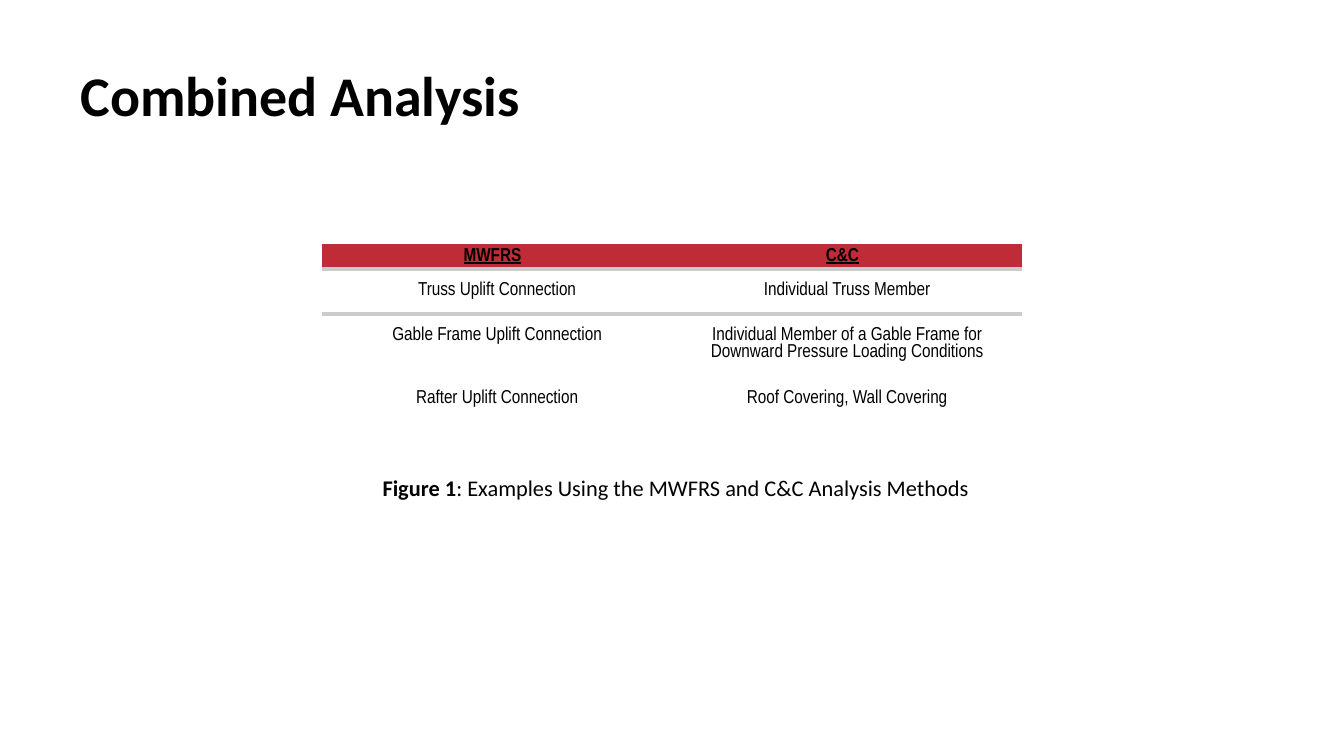
from lxml.etree import SubElement
from pptx import Presentation
from pptx.dml.color import RGBColor
from pptx.enum.text import MSO_ANCHOR, PP_ALIGN
from pptx.oxml.ns import qn
from pptx.util import Emu, Pt

SLIDE_WIDTH, SLIDE_HEIGHT = 1344, 756
EMU_PER_PX = 9144000 / SLIDE_WIDTH
PLAIN_TABLE_STYLE = "{2D5ABB26-0587-4C30-8999-92F81FD0307C}"

METHODS = [
    ("MWFRS", "C&C"),
    ("Truss Uplift Connection", "Individual Truss Member"),
    ("Gable Frame Uplift Connection",
     "Individual Member of a Gable Frame for\vDownward Pressure Loading Conditions"),
    ("Rafter Uplift Connection", "Roof Covering, Wall Covering"),
]
ROW_HEIGHTS = [25, 45, 63, 45]


def px(length):
    return Emu(round(length * EMU_PER_PX))


def color(hex_code):
    return RGBColor.from_string(hex_code)


def format_run(run, size, face, bold=False, underline=False):
    run.font.size = Pt(size)
    run.font.name = face
    run.font.bold = bold
    run.font.underline = underline
    run.font.color.rgb = color("000000")


def add_title(slide, wording):
    title = slide.shapes.title
    title.left, title.top, title.width, title.height = map(px, (67, 31, 1210, 126))
    title.text_frame.text = wording
    title.text_frame.vertical_anchor = MSO_ANCHOR.MIDDLE
    heading = title.text_frame.paragraphs[0]
    heading.alignment = PP_ALIGN.LEFT
    format_run(heading.runs[0], 30, "Calibri", bold=True)


def add_border(cell, side, hex_code, points):
    border = SubElement(cell._tc.get_or_add_tcPr(), qn(f"a:{side}"), w=str(Pt(points)))
    fill = SubElement(border, qn("a:solidFill"))
    SubElement(fill, qn("a:srgbClr"), val=hex_code)


def fill_cell(cell, wording, is_header):
    inset = px(4 if is_header else 13)
    cell.margin_left = cell.margin_top = cell.margin_bottom = inset
    cell.margin_right = px(13)
    cell.vertical_anchor = MSO_ANCHOR.MIDDLE if is_header else MSO_ANCHOR.TOP
    cell.fill.solid()
    cell.fill.fore_color.rgb = color("BF2C37" if is_header else "FFFFFF")
    paragraph = cell.text_frame.paragraphs[0]
    paragraph.text = wording
    paragraph.alignment = PP_ALIGN.CENTER
    for run in paragraph.runs:
        format_run(run, 10, "Arial Narrow", bold=is_header, underline=is_header)


def add_methods_table(slide):
    frame = slide.shapes.add_table(len(METHODS), 2, px(322), px(244),
                                   px(700), px(sum(ROW_HEIGHTS)))
    table = frame.table
    table.horz_banding = False
    table._tbl.tblPr.find(qn("a:tableStyleId")).text = PLAIN_TABLE_STYLE
    for row, height in zip(table.rows, ROW_HEIGHTS):
        row.height = px(height)
    for row_index, wordings in enumerate(METHODS):
        for column_index, wording in enumerate(wordings):
            cell = table.cell(row_index, column_index)
            if row_index < 2:
                add_border(cell, ("lnB", "lnT")[row_index], "CCCCCC", 2.25)
            fill_cell(cell, wording, row_index == 0)


def add_caption(slide, label, wording):
    caption = slide.shapes.add_textbox(px(340), px(468), px(672), px(40))
    caption.text_frame.word_wrap = True
    paragraph = caption.text_frame.paragraphs[0]
    paragraph.alignment = PP_ALIGN.CENTER
    for part, bold in ((label, True), (wording, False)):
        run = paragraph.add_run()
        run.text = part
        format_run(run, 12, "Calibri", bold=bold)


def main():
    presentation = Presentation()
    presentation.slide_width = px(SLIDE_WIDTH)
    presentation.slide_height = px(SLIDE_HEIGHT)
    slide = presentation.slides.add_slide(presentation.slide_layouts[5])
    add_title(slide, "Combined Analysis")
    add_methods_table(slide)
    add_caption(slide, "Figure 1", ": Examples Using the MWFRS and C&C Analysis Methods")
    presentation.save("out.pptx")


if __name__ == "__main__":
    main()
